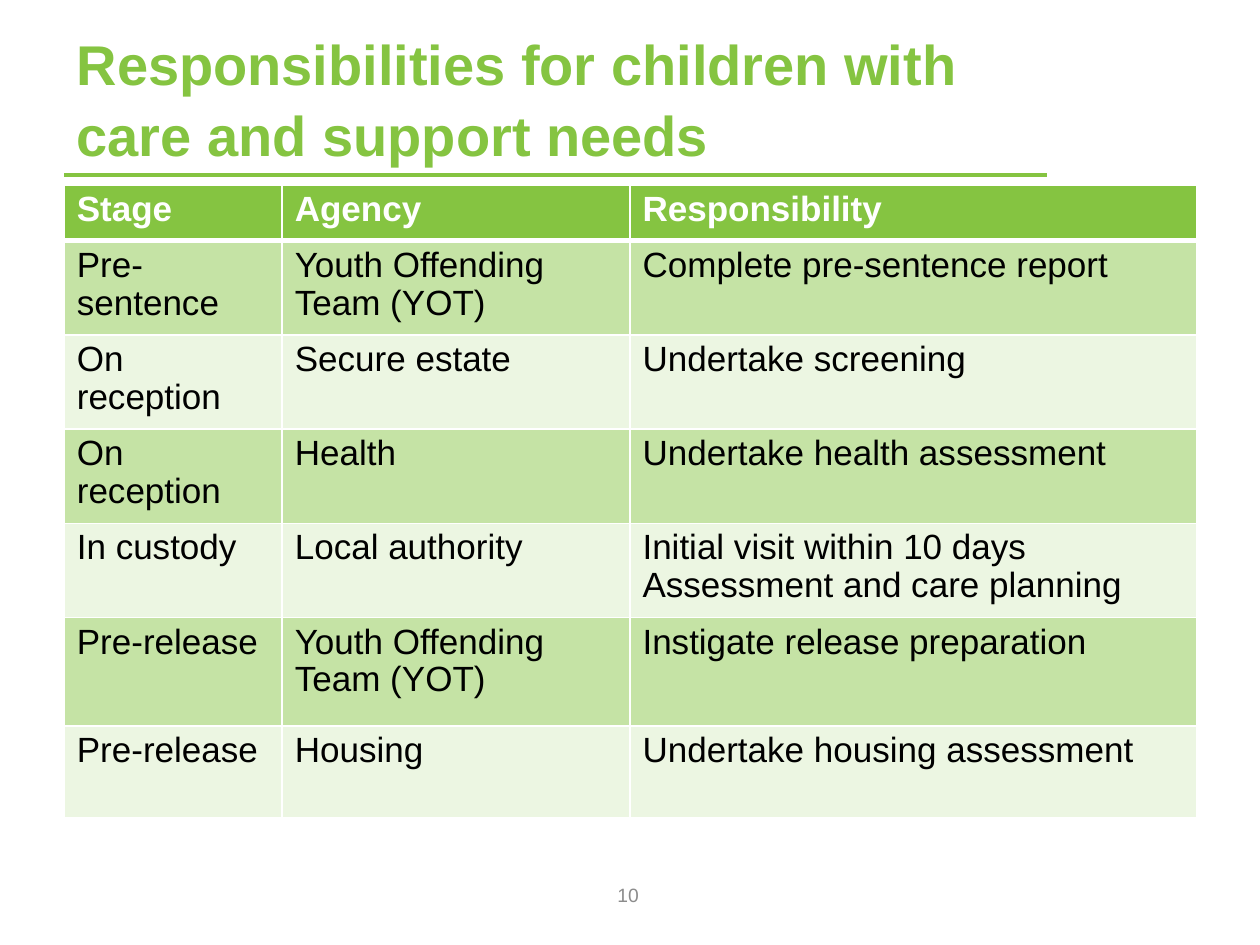
from dataclasses import dataclass
from typing import NamedTuple

from lxml.etree import SubElement
from pptx import Presentation
from pptx.dml.color import RGBColor
from pptx.enum.shapes import MSO_CONNECTOR
from pptx.enum.text import MSO_ANCHOR, PP_ALIGN
from pptx.oxml.ns import qn
from pptx.util import Inches, Pt


@dataclass(frozen=True)
class Theme:
    font: str = "Arial"
    green: str = "85C441"
    band_dark: str = "C5E3A5"
    band_light: str = "ECF6E2"
    white: str = "FFFFFF"
    black: str = "000000"
    grey: str = "8C8C8C"
    title_size: int = 32
    table_size: int = 20
    number_size: int = 11


class Style(NamedTuple):
    size: int
    color: str
    bold: bool = False
    align: PP_ALIGN = PP_ALIGN.LEFT
    spacing: float = 1.0


class Duty(NamedTuple):
    stage: str
    agency: str
    responsibility: str


THEME = Theme()
TITLE = Style(THEME.title_size, THEME.green, bold=True, spacing=1.06)
HEADER = Style(THEME.table_size, THEME.white, bold=True, spacing=0.97)
BODY = Style(THEME.table_size, THEME.black, spacing=0.97)
NUMBER = Style(THEME.number_size, THEME.grey, align=PP_ALIGN.CENTER)

LEFT = 0.51
COLUMN_WIDTHS = (1.73, 2.76, 4.5)
ROW_HEIGHTS = (0.44, 0.73, 0.73, 0.73, 0.73, 0.86, 0.73)
DUTIES = (
    Duty("Stage", "Agency", "Responsibility"),
    Duty("Pre-sentence", "Youth Offending Team (YOT)", "Complete pre-sentence report"),
    Duty("On reception", "Secure estate", "Undertake screening"),
    Duty("On reception", "Health", "Undertake health assessment"),
    Duty("In custody", "Local authority",
         "Initial visit within 10 days\nAssessment and care planning"),
    Duty("Pre-release", "Youth Offending Team (YOT)", "Instigate release preparation"),
    Duty("Pre-release", "Housing", "Undertake housing assessment"),
)


def write_text(text_frame, text: str, style: Style) -> None:
    text_frame.text = text
    for para in text_frame.paragraphs:
        para.alignment = style.align
        para.line_spacing = style.spacing
        for span in para.runs:
            span.font.name = THEME.font
            span.font.size = Pt(style.size)
            span.font.bold = style.bold
            span.font.color.rgb = RGBColor.from_string(style.color)


def add_text(page, left: float, top: float, width: float, height: float,
             text: str, style: Style, anchor: MSO_ANCHOR) -> None:
    box = page.shapes.add_textbox(Inches(left), Inches(top), Inches(width), Inches(height))
    box.text_frame.word_wrap = True
    box.text_frame.vertical_anchor = anchor
    write_text(box.text_frame, text, style)


def add_rule(page, left: float, right: float, y: float) -> None:
    rule = page.shapes.add_connector(
        MSO_CONNECTOR.STRAIGHT, Inches(left), Inches(y), Inches(right), Inches(y))
    rule.line.color.rgb = RGBColor.from_string(THEME.green)
    rule.line.width = Pt(2)
    SubElement(rule.element.spPr, qn("a:effectLst"))


def set_borders(cell, top: float, bottom: float) -> None:
    """Draw white borders; must run before the fill, which follows them in the XML."""
    properties = cell._tc.get_or_add_tcPr()
    for side, width in (("L", 1), ("R", 1), ("T", top), ("B", bottom)):
        border = SubElement(properties, qn(f"a:ln{side}"), w=str(Pt(width)))
        fill = SubElement(border, qn("a:solidFill"))
        SubElement(fill, qn("a:srgbClr"), val=THEME.white)


def add_duties_table(page, left: float, top: float) -> None:
    table = page.shapes.add_table(
        len(DUTIES), len(COLUMN_WIDTHS), Inches(left), Inches(top),
        Inches(sum(COLUMN_WIDTHS)), Inches(sum(ROW_HEIGHTS))).table
    for column, width in zip(table.columns, COLUMN_WIDTHS):
        column.width = Inches(width)
    for index, (row, height, duty) in enumerate(zip(table.rows, ROW_HEIGHTS, DUTIES)):
        row.height = Inches(height)
        band = THEME.band_dark if index % 2 else THEME.band_light
        color = band if index else THEME.green
        for cell, text in zip(row.cells, duty):
            set_borders(cell, top=3 if index == 1 else 1, bottom=1 if index else 3)
            cell.fill.solid()
            cell.fill.fore_color.rgb = RGBColor.from_string(color)
            write_text(cell.text_frame, text, BODY if index else HEADER)


def main() -> None:
    deck = Presentation()
    deck.slide_width, deck.slide_height = Inches(10), Inches(7.5)
    page = deck.slides.add_slide(deck.slide_layouts[6])
    add_rule(page, LEFT, 8.31, 1.39)
    add_text(page, LEFT, 0.29, 7.8, 1.09,
             "Responsibilities for children with care and support needs",
             TITLE, MSO_ANCHOR.BOTTOM)
    add_duties_table(page, LEFT, 1.47)
    add_text(page, 3.82, 6.9, 2.33, 0.4, "10", NUMBER, MSO_ANCHOR.MIDDLE)
    deck.save("out.pptx")


if __name__ == "__main__":
    main()
